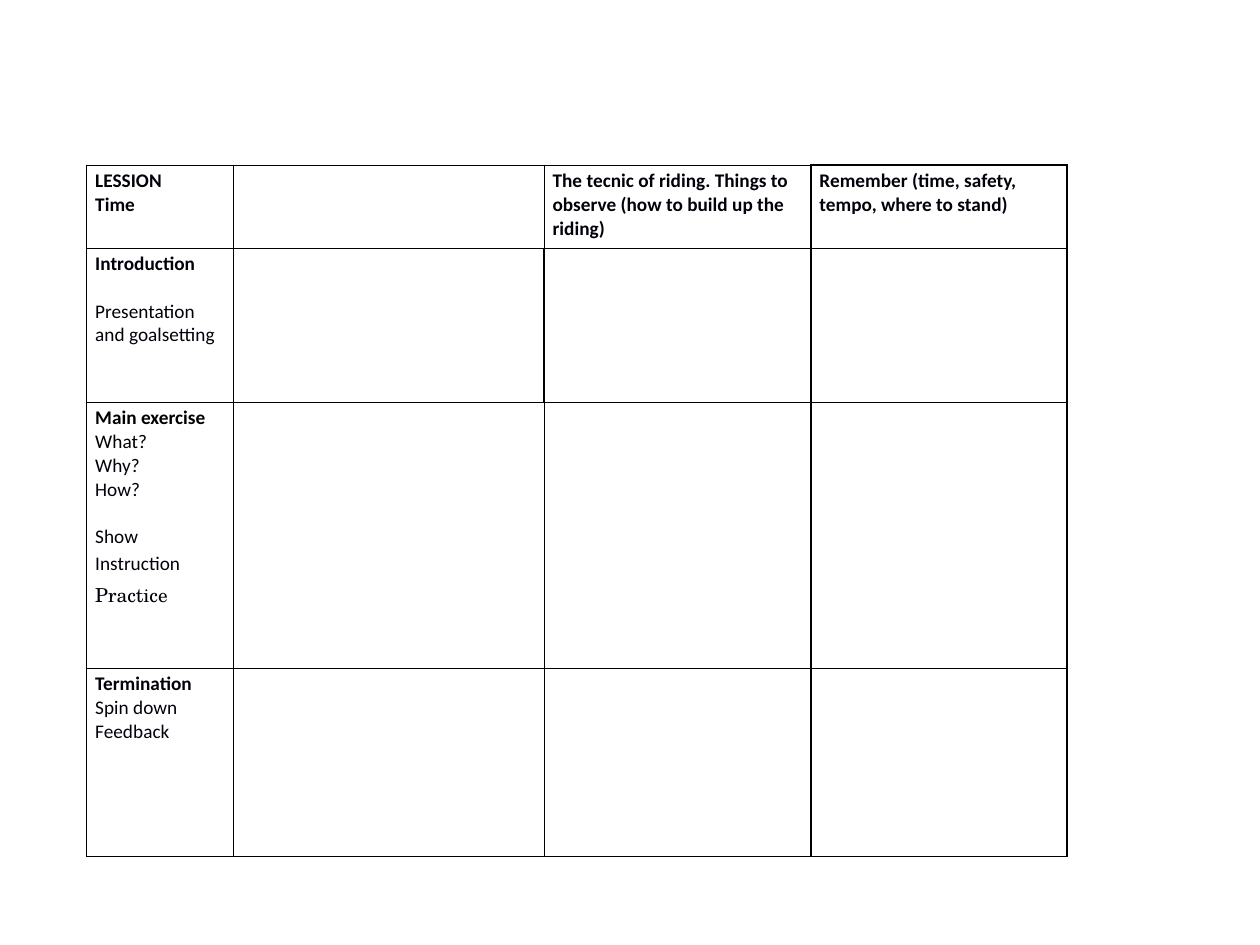
from lxml import etree
from pptx import Presentation
from pptx import util as u
from pptx.dml import color
from pptx.oxml import ns

theme = {
    "ink": "00000A",
    "black": "000000",
    "thin": ("000001", 0.75),
    "strong": ("000000", 1),
    "size": 11,
    "body": "Calibri",
    "serif": "TeX Gyre Schola",
}
plain = {"name": theme["body"], "size": u.Pt(theme["size"]), "bold": False}
bold = {**plain, "bold": True}
serif = {**plain, "name": theme["serif"]}

column_widths = [2.95, 6.27, 5.38, 5.16]
row_heights = [1.68, 3.1, 5.36, 3.8]
margins = {
    "margin_left": u.Cm(0.17),
    "margin_right": u.Cm(0.17),
    "margin_top": u.Cm(0.08),
    "margin_bottom": u.Cm(0.08),
}
lesson_plan = {
    (0, 0): [("LESSION", bold, 0), ("Time", bold, 0)],
    (0, 2): [("The tecnic of riding. Things to observe (how to build up the riding)", bold, 0)],
    (0, 3): [("Remember (time, safety, tempo, where to stand)", bold, 0)],
    (1, 0): [("Introduction", bold, 0), ("Presentation and goalsetting", plain, 13.4)],
    (2, 0): [
        ("Main exercise", bold, 0),
        ("What?", plain, 0),
        ("Why?", plain, 0),
        ("How?", plain, 0),
        ("Show", plain, 13.4),
        ("Instruction", plain, 2),
        ("Practice", serif, 2.5),
    ],
    (3, 0): [("Termination", bold, 0), ("Spin down", plain, 0), ("Feedback", plain, 0)],
}
black_lines = {"Main exercise", "What?"}
strong_cells = {(0, 3), (1, 2), (1, 3)}
sides = {"lnL": (0, -1), "lnR": (0, 1), "lnT": (-1, 0), "lnB": (1, 0)}


def set_values(target, values):
    for name, value in values.items():
        setattr(target, name, value)


def add_border(properties, side, line_color, points):
    line = etree.SubElement(properties, ns.qn(f"a:{side}"), w=str(u.Pt(points)))
    fill = etree.SubElement(line, ns.qn("a:solidFill"))
    etree.SubElement(fill, ns.qn("a:srgbClr"), val=line_color)


presentation = Presentation()
presentation.slide_width = u.Cm(25.4)
presentation.slide_height = u.Cm(19.05)
slide = presentation.slides.add_slide(presentation.slide_layouts[6])

table = slide.shapes.add_table(
    len(row_heights), len(column_widths), u.Cm(1.75), u.Cm(3.33),
    u.Cm(sum(column_widths)), u.Cm(sum(row_heights)),
).table
set_values(table, {"first_row": False, "horz_banding": False})
for column, width in zip(table.columns, column_widths):
    column.width = u.Cm(width)
for row, height in zip(table.rows, row_heights):
    row.height = u.Cm(height)

for row_index in range(len(row_heights)):
    for column_index in range(len(column_widths)):
        position = (row_index, column_index)
        cell = table.cell(*position)
        set_values(cell, margins)
        properties = cell._tc.get_or_add_tcPr()
        for side, (down, across) in sides.items():
            neighbour = (row_index + down, column_index + across)
            weight = "strong" if {position, neighbour} & strong_cells else "thin"
            add_border(properties, side, *theme[weight])
        cell.fill.background()
        for index, (text, style, gap) in enumerate(lesson_plan.get(position, [])):
            frame = cell.text_frame
            paragraph = frame.add_paragraph() if index else frame.paragraphs[0]
            if gap:
                paragraph.space_before = u.Pt(gap)
            run = paragraph.add_run()
            run.text = text
            set_values(run.font, style)
            ink = theme["black" if text in black_lines else "ink"]
            run.font.color.rgb = color.RGBColor.from_string(ink)

presentation.save("out.pptx")
